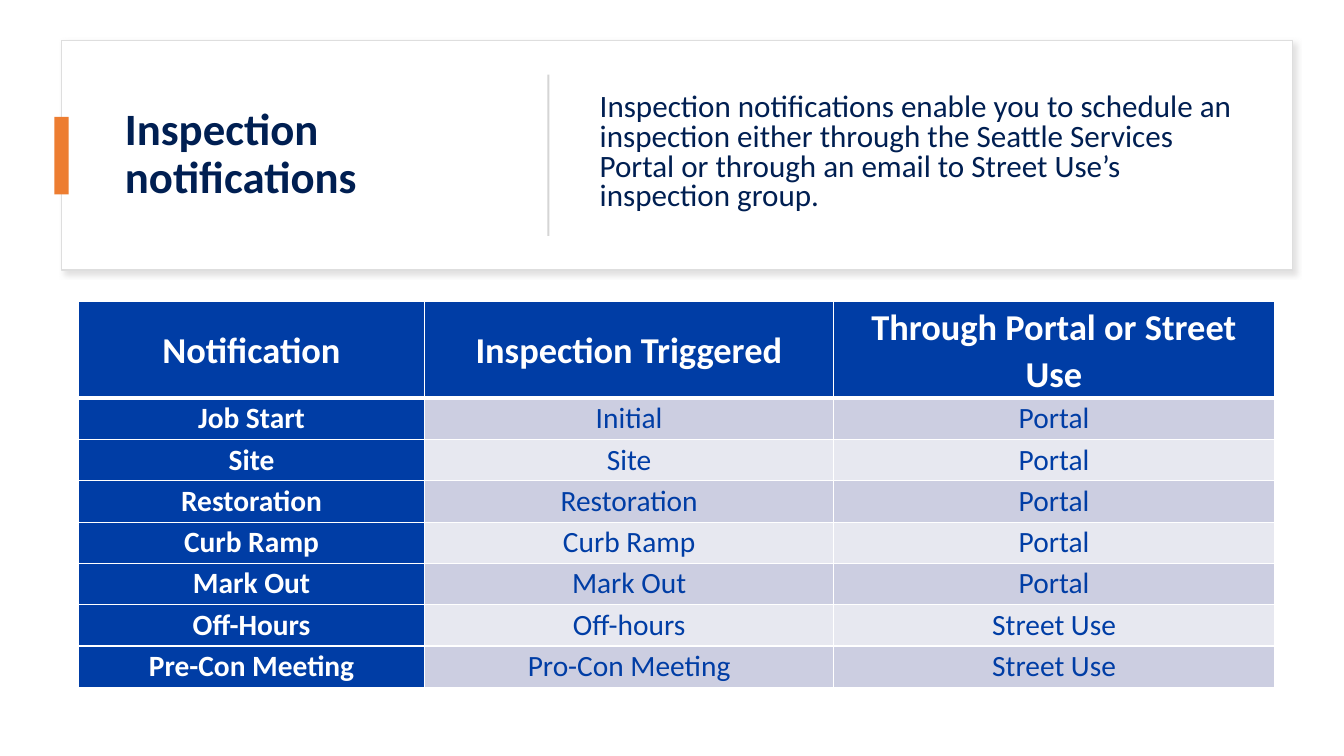
from dataclasses import dataclass

from lxml.etree import SubElement
from pptx import Presentation
from pptx.dml.color import RGBColor
from pptx.enum.shapes import MSO_SHAPE as Shape
from pptx.enum.text import MSO_ANCHOR as Anchor, PP_ALIGN as Align
from pptx.oxml.ns import qn
from pptx.util import Inches, Pt


@dataclass(frozen=True)
class Theme:
    font: str = "Calibri"
    white: str = "FFFFFF"
    navy: str = "001F52"
    blue: str = "003DA5"
    orange: str = "ED7D31"
    frame: str = "DEDEDE"
    divider: str = "D5D5D5"
    shadow: str = "C5C3C3"
    bands: tuple = ("CCCEE1", "E7E8F0")
    title_size: float = 32
    body_size: float = 22.2
    header_size: float = 26
    cell_size: float = 21


THEME = Theme()

HEADER = ("Notification", "Inspection Triggered", "Through Portal or Street Use")
NOTIFICATIONS = (
    ("Job Start", "Initial", "Portal"),
    ("Site", "Site", "Portal"),
    ("Restoration", "Restoration", "Portal"),
    ("Curb Ramp", "Curb Ramp", "Portal"),
    ("Mark Out", "Mark Out", "Portal"),
    ("Off-Hours", "Off-hours", "Street Use"),
    ("Pre-Con Meeting", "Pro-Con Meeting", "Street Use"),
)
COLUMN_WIDTHS = (3.43, 4.06, 4.37)
HEADER_HEIGHT, ROW_HEIGHT = 0.96, 0.41


def write_text(frame, text, *, size, color, bold=False, align=Align.LEFT, spacing=1.0):
    para = frame.paragraphs[0]
    para.alignment = align
    para.line_spacing = spacing
    span = para.add_run()
    span.text = text
    span.font.name = THEME.font
    span.font.size = Pt(size)
    span.font.bold = bold
    span.font.color.rgb = RGBColor.from_string(color)


def add_text(page, text, left, top, width, height, **text_format):
    box = page.shapes.add_textbox(Inches(left), Inches(top), Inches(width), Inches(height))
    box.text_frame.word_wrap = True
    box.text_frame.vertical_anchor = Anchor.MIDDLE
    write_text(box.text_frame, text, **text_format)


def add_block(page, left, top, width, height, fill, line=None):
    block = page.shapes.add_shape(
        Shape.RECTANGLE, Inches(left), Inches(top), Inches(width), Inches(height))
    block.shadow.inherit = False
    block.fill.solid()
    block.fill.fore_color.rgb = RGBColor.from_string(fill)
    if line:
        block.line.color.rgb = RGBColor.from_string(line)
        block.line.width = Pt(1)
    else:
        block.line.fill.background()
    return block


def add_soft_shadow(block):
    effects = block.element.spPr.find(qn("a:effectLst"))
    shadow = SubElement(effects, qn("a:outerShdw"), blurRad=str(Pt(4)), dist=str(Pt(3)),
                        dir="2700000", algn="tl", rotWithShape="0")
    color = SubElement(shadow, qn("a:srgbClr"), val=THEME.shadow)
    SubElement(color, qn("a:alpha"), val="50000")


def set_borders(cell, top, bottom):
    properties = cell._tc.get_or_add_tcPr()
    for side, width in (("L", 1), ("R", 1), ("T", top), ("B", bottom)):
        border = SubElement(properties, qn(f"a:ln{side}"), w=str(Pt(width)))
        fill = SubElement(border, qn("a:solidFill"))
        SubElement(fill, qn("a:srgbClr"), val=THEME.white)


def format_cell(cell, text, row, column):
    is_header = row == 0
    is_label = is_header or column == 0
    # Borders go before the fill in the cell properties
    set_borders(cell, top=3 if row == 1 else 1, bottom=3 if is_header else 1)
    cell.fill.solid()
    fill = THEME.blue if is_label else THEME.bands[(row - 1) % 2]
    cell.fill.fore_color.rgb = RGBColor.from_string(fill)
    cell.margin_left = cell.margin_right = Inches(0.1)
    cell.margin_top = cell.margin_bottom = 0
    cell.vertical_anchor = Anchor.MIDDLE if is_header else Anchor.TOP
    write_text(cell.text_frame, text,
               size=THEME.header_size if is_header else THEME.cell_size,
               color=THEME.white if is_label else THEME.blue,
               bold=is_label, align=Align.CENTER, spacing=1.07)


def add_notification_table(page, left, top):
    rows = (HEADER, *NOTIFICATIONS)
    height = HEADER_HEIGHT + ROW_HEIGHT * len(NOTIFICATIONS)
    table = page.shapes.add_table(
        len(rows), len(HEADER), Inches(left), Inches(top),
        Inches(sum(COLUMN_WIDTHS)), Inches(height)).table
    for column, width in zip(table.columns, COLUMN_WIDTHS):
        column.width = Inches(width)
    for r, texts in enumerate(rows):
        table.rows[r].height = Inches(ROW_HEIGHT if r else HEADER_HEIGHT)
        for c, text in enumerate(texts):
            format_cell(table.cell(r, c), text, r, c)


def main():
    deck = Presentation()
    deck.slide_width, deck.slide_height = Inches(13.33), Inches(7.5)
    page = deck.slides.add_slide(deck.slide_layouts[6])

    # Heading card with accent and divider
    card = add_block(page, 0.61, 0.4, 12.21, 2.28, THEME.white, line=THEME.frame)
    add_soft_shadow(card)
    add_text(page, "Inspection notifications", 1.14, 0.64, 3.89, 1.8,
             size=THEME.title_size, color=THEME.navy, bold=True, spacing=0.9)
    add_block(page, 0.54, 1.16, 0.14, 0.77, THEME.orange)
    add_block(page, 5.43, 0.74, 0.02, 1.6, THEME.divider)
    add_text(page, "Inspection notifications enable you to schedule an inspection either "
             "through the Seattle Services Portal or through an email to Street Use’s "
             "inspection group.", 5.85, 0.62, 6.56, 1.8,
             size=THEME.body_size, color=THEME.navy, spacing=0.8)

    # Notifications and where to send them
    add_notification_table(page, 0.78, 2.99)

    deck.save("out.pptx")


if __name__ == "__main__":
    main()
